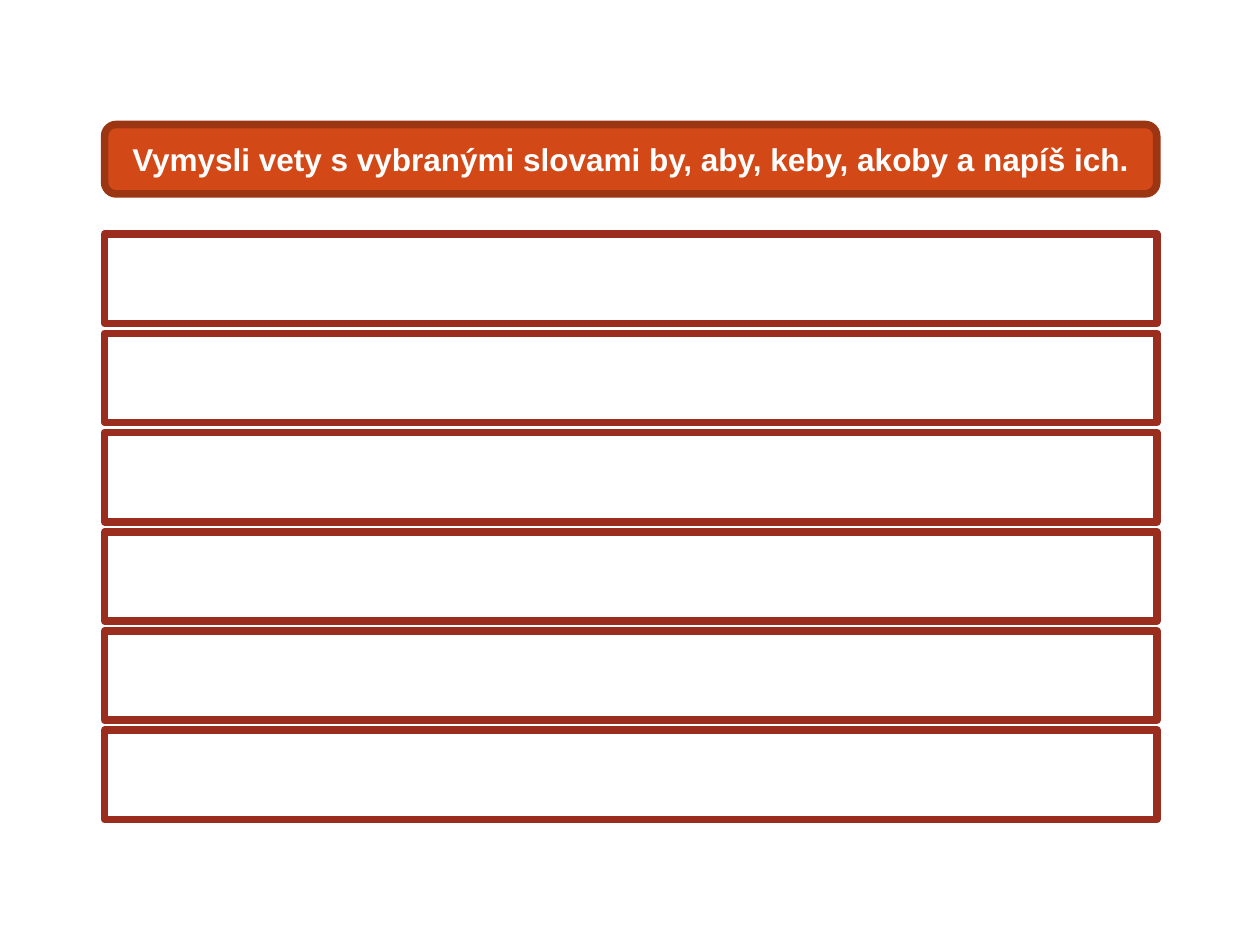
from pptx import Presentation
from pptx import util as u
from pptx.dml import color
from pptx.enum import shapes, text

hues = {"fill": "D34817", "edge": "9C3511", "row": "9B2D1F", "white": "FFFFFF"}
left, width = u.Cm(2.11), u.Cm(21.21)
top, height = u.Cm(2.51), u.Cm(1.4)


def rgb(name):
    return color.RGBColor.from_string(hues[name])


def add_box(kind, y, tall, fill, edge):
    box = slide.shapes.add_shape(kind, left, y, width, tall)
    box.shadow.inherit = False
    box.fill.solid()
    box.fill.fore_color.rgb = rgb(fill)
    box.line.color.rgb = rgb(edge)
    box.line.width = u.Pt(4.33)
    return box


deck = Presentation()
deck.slide_width, deck.slide_height = u.Cm(25.4), u.Cm(19.05)
slide = deck.slides.add_slide(deck.slide_layouts[5])

banner = add_box(shapes.MSO_SHAPE.ROUNDED_RECTANGLE, top, height, "fill", "edge")

title = slide.shapes.title
place = {"left": left, "top": top, "width": width, "height": height}
for key, value in place.items():
    setattr(title, key, value)
slide.shapes._spTree.append(title._element)

frame = title.text_frame
frame.text = "Vymysli vety s vybranými slovami by, aby, keby, akoby a napíš ich."
layout = {
    "word_wrap": True,
    "auto_size": text.MSO_AUTO_SIZE.NONE,
    "vertical_anchor": text.MSO_ANCHOR.MIDDLE,
}
for key, value in layout.items():
    setattr(frame, key, value)

line = frame.paragraphs[0]
line.alignment = text.PP_ALIGN.CENTER
font = line.runs[0].font
style = {"name": "Arial", "size": u.Pt(18), "bold": True}
for key, value in style.items():
    setattr(font, key, value)
font.color.rgb = rgb("white")

for row in range(6):
    add_box(shapes.MSO_SHAPE.RECTANGLE, u.Cm(4.72 + 2 * row), u.Cm(1.8), "white", "row")

deck.save("out.pptx")
